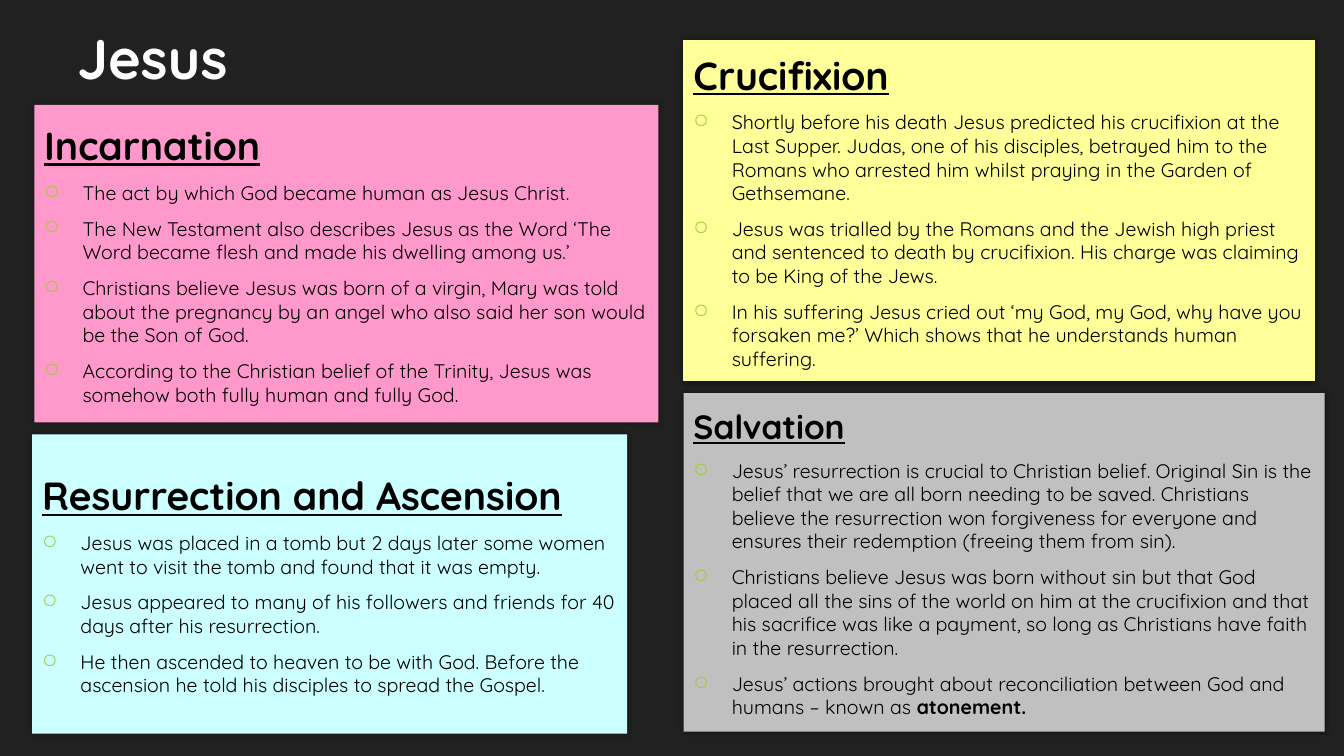
import pptx
import pptx.dml.color
import pptx.enum.shapes
import pptx.enum.text
import pptx.oxml
import pptx.oxml.ns
import pptx.util
from pptx.util import Inches

RGBColor = pptx.dml.color.RGBColor
BACKGROUND = RGBColor(0x21, 0x21, 0x21)
WHITE = RGBColor(0xFE, 0xFE, 0xFE)
BLACK = RGBColor(0x00, 0x00, 0x00)
GREEN = RGBColor(0x9E, 0xCD, 0x33)
PINK = RGBColor(0xFF, 0x99, 0xCC)
YELLOW = RGBColor(0xFF, 0xFF, 0x99)
CYAN = RGBColor(0xCC, 0xFF, 0xFF)
GREY = RGBColor(0xC0, 0xC0, 0xC0)

PANELS = [
    ("Incarnation", 28, PINK, None, (0.34, 1.04, 6.19, 3.15), [
        "The act by which God became human as Jesus Christ.",
        "The New Testament also describes Jesus as the Word ‘The Word became flesh and made his dwelling among us.’",
        "Christians believe Jesus was born of a virgin, Mary was told about the pregnancy by an angel who also said "
        "her son would be the Son of God.",
        "According to the Christian belief of the Trinity, Jesus was somehow both fully human and fully God.",
    ]),
    ("Crucifixion", 28, YELLOW, YELLOW, (6.78, 0.4, 6.26, 3.38), [
        "Shortly before his death Jesus predicted his crucifixion at the Last Supper. Judas, one of his disciples, "
        "betrayed him to the Romans who arrested him whilst praying in the Garden of Gethsemane.",
        "Jesus was trialled by the Romans and the Jewish high priest and sentenced to death by crucifixion. "
        "His charge was claiming to be King of the Jews.",
        "In his suffering Jesus cried out ‘my God, my God, why have you forsaken me?’ Which shows that he "
        "understands human suffering.",
    ]),
    ("Resurrection and Ascension", 28, CYAN, None, (0.32, 4.31, 5.9, 2.97), [
        "Jesus was placed in a tomb but 2 days later some women went to visit the tomb and found that it was empty.",
        "Jesus appeared to many of his followers and friends for 40 days after his resurrection.",
        "He then ascended to heaven to be with God. Before the ascension he told his disciples to spread the Gospel.",
    ]),
    ("Salvation", 24, GREY, None, (6.78, 3.9, 6.36, 3.36), [
        "Jesus’ resurrection is crucial to Christian belief. Original Sin is the belief that we are all born needing "
        "to be saved. Christians believe the resurrection won forgiveness for everyone and ensures their redemption "
        "(freeing them from sin).",
        "Christians believe Jesus was born without sin but that God placed all the sins of the world on him at the "
        "crucifixion and that his sacrifice was like a payment, so long as Christians have faith in the resurrection.",
        "Jesus’ actions brought about reconciliation between God and humans – known as **atonement.",
    ]),
]


def add_span(para, text, size=14, color=BLACK, bold=False, underline=False):
    span = para.add_run()
    span.text = text
    span.font.name = "Quicksand"
    span.font.size = pptx.util.Pt(size)
    span.font.color.rgb = color
    span.font.bold = bold
    span.font.underline = underline
    return span


def make_shadow(blur, distance, direction):
    return pptx.oxml.parse_xml(
        f'<a:effectLst {pptx.oxml.ns.nsdecls("a")}>'
        f'<a:outerShdw blurRad="{pptx.util.Pt(blur)}" dist="{pptx.util.Pt(distance)}" dir="{direction * 60000}" '
        f'algn="tl" rotWithShape="0"><a:srgbClr val="{BLACK}"><a:alpha val="40000"/></a:srgbClr>'
        '</a:outerShdw></a:effectLst>')


class SlideBuilder:
    """Hold the dark slide and add its title and coloured panels."""

    def __init__(self, deck):
        self.page = deck.slides.add_slide(deck.slide_layouts[6])
        self.page.background.fill.solid()
        self.page.background.fill.fore_color.rgb = BACKGROUND

    def add_title(self, text, place):
        box = self.page.shapes.add_textbox(*map(Inches, place))
        box.text_frame.word_wrap = True
        box.text_frame.vertical_anchor = pptx.enum.text.MSO_ANCHOR.BOTTOM
        span = add_span(box.text_frame.paragraphs[0], text, size=40, color=WHITE, bold=True)
        span.font.fill._xPr.find(pptx.oxml.ns.qn("a:solidFill")).addnext(make_shadow(4, 2, 45))

    def add_panel(self, heading, size, fill, line, place, points):
        panel = self.page.shapes.add_shape(pptx.enum.shapes.MSO_SHAPE.RECTANGLE, *map(Inches, place))
        panel.fill.solid()
        panel.fill.fore_color.rgb = fill
        if line is None:
            panel.line.fill.background()
        else:
            panel.line.color.rgb = line
            panel.line.width = pptx.util.Pt(0.75)
        panel._element.spPr.append(make_shadow(4, 0, 240))
        frame = panel.text_frame
        frame.word_wrap = True
        frame.vertical_anchor = pptx.enum.text.MSO_ANCHOR.MIDDLE
        add_span(self.format_para(frame.paragraphs[0], size), heading, size=size, bold=True, underline=True)
        for point in points:
            para = self.format_para(frame.add_paragraph(), 14)
            self.add_bullet(para)
            plain, _, strong = point.partition("**")
            add_span(para, plain)
            if strong:
                add_span(para, strong, bold=True)

    def format_para(self, para, size):
        para.alignment = pptx.enum.text.PP_ALIGN.LEFT
        para.space_before = pptx.util.Pt(0.2 * size)
        para.space_after = pptx.util.Pt(6)
        properties = para._p.get_or_add_pPr()
        properties.set("marL", str(Inches(0.38)))
        properties.set("indent", str(Inches(-0.38)))
        return para

    def add_bullet(self, para):
        properties = para._p.get_or_add_pPr()
        for tag in (f'<a:buClr {{}}><a:srgbClr val="{GREEN}"/></a:buClr>', '<a:buChar {} char="○"/>'):
            properties.append(pptx.oxml.parse_xml(tag.format(pptx.oxml.ns.nsdecls("a"))))


def main():
    deck = pptx.Presentation()
    deck.slide_width = Inches(13.33)
    deck.slide_height = Inches(7.5)
    builder = SlideBuilder(deck)
    builder.add_title("Jesus", (0.67, -0.3, 12, 1.25))
    for panel in PANELS:
        builder.add_panel(*panel)
    deck.save("out.pptx")


if __name__ == "__main__":
    main()
